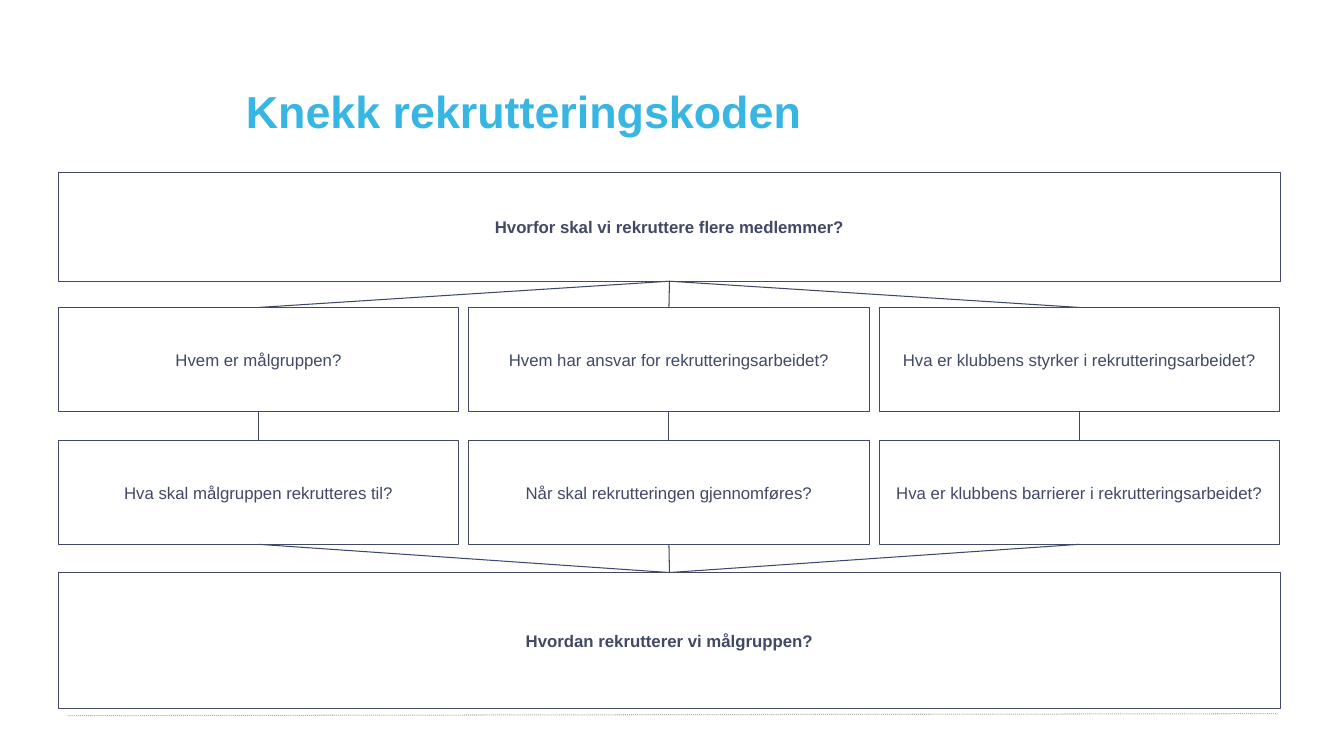
from dataclasses import dataclass

import pptx
import pptx.dml.color
import pptx.enum.dml
import pptx.enum.shapes
import pptx.enum.text
import pptx.oxml.ns
import pptx.shapes.autoshape
import pptx.shapes.connector
import pptx.slide
import pptx.text.text
import pptx.util
from lxml import etree

Inches = pptx.util.Inches
RGBColor = pptx.dml.color.RGBColor

CYAN = RGBColor(0x38, 0xB6, 0xE3)
NAVY = RGBColor(0x40, 0x49, 0x65)
LINK = RGBColor(0x3E, 0x47, 0x64)
GREY = RGBColor(0xA8, 0xA9, 0xAA)

LEFT, COL_STEP, COL_WIDTH, FULL_WIDTH = 0.58, 4.07, 3.97, 12.12
ROW_TOP, ROW_STEP, ROW_HEIGHT = 3.05, 1.32, 1.03
TOP, BOTTOM = 0, 2


@dataclass
class Box:
    text: str
    left: float
    top: float
    width: float
    height: float
    bold: bool = False


WHY = Box("Hvorfor skal vi rekruttere flere medlemmer?", LEFT, 1.71, FULL_WIDTH, 1.08, True)
HOW = Box("Hvordan rekrutterer vi målgruppen?", LEFT, 5.68, FULL_WIDTH, 1.35, True)
QUESTIONS = [
    ("Hvem er målgruppen?", "Hva skal målgruppen rekrutteres til?"),
    ("Hvem har ansvar for rekrutteringsarbeidet?", "Når skal rekrutteringen gjennomføres?"),
    (
        "Hva er klubbens styrker i rekrutteringsarbeidet?",
        "Hva er klubbens barrierer i rekrutteringsarbeidet?",
    ),
]


def write(
    tf: pptx.text.text.TextFrame,
    text: str,
    *,
    size: float = 12,
    bold: bool = False,
    color: RGBColor = NAVY,
    align: pptx.enum.text.PP_ALIGN = pptx.enum.text.PP_ALIGN.CENTER,
    anchor: pptx.enum.text.MSO_ANCHOR = pptx.enum.text.MSO_ANCHOR.MIDDLE,
) -> None:
    tf.word_wrap = True
    tf.vertical_anchor = anchor
    p = tf.paragraphs[0]
    p.alignment = align
    r = p.add_run()
    r.text = text
    r.font.name = "Arial"
    r.font.size = pptx.util.Pt(size)
    r.font.bold = bold
    r.font.color.rgb = color


def add_box(s: pptx.slide.Slide, box: Box) -> pptx.shapes.autoshape.Shape:
    sp = s.shapes.add_shape(
        pptx.enum.shapes.MSO_SHAPE.RECTANGLE,
        Inches(box.left), Inches(box.top), Inches(box.width), Inches(box.height),
    )
    sp.shadow.inherit = False
    sp.fill.background()
    sp.line.color.rgb = NAVY
    sp.line.width = pptx.util.Pt(0.75)
    write(sp.text_frame, box.text, bold=box.bold)
    return sp


def add_line(
    s: pptx.slide.Slide,
    color: RGBColor,
    x1: float = 0,
    y1: float = 0,
    x2: float = 0,
    y2: float = 0,
) -> pptx.shapes.connector.Connector:
    cxn = s.shapes.add_connector(
        pptx.enum.shapes.MSO_CONNECTOR.STRAIGHT,
        Inches(x1), Inches(y1), Inches(x2), Inches(y2),
    )
    cxn.line.color.rgb = color
    cxn.line.width = pptx.util.Pt(0.75)
    sp_pr = cxn.element.find(pptx.oxml.ns.qn("p:spPr"))
    etree.SubElement(sp_pr, pptx.oxml.ns.qn("a:effectLst"))
    return cxn


def join(
    s: pptx.slide.Slide,
    upper: pptx.shapes.autoshape.Shape,
    lower: pptx.shapes.autoshape.Shape,
) -> None:
    cxn = add_line(s, LINK)
    cxn.begin_connect(upper, BOTTOM)
    cxn.end_connect(lower, TOP)


def main() -> None:
    prs = pptx.Presentation()
    prs.slide_width, prs.slide_height = Inches(13.33), Inches(7.5)
    s = prs.slides.add_slide(prs.slide_layouts[6])

    footer = add_line(s, GREY, 0.67, 7.1, 12.67, 7.08)
    footer.line.dash_style = pptx.enum.dml.MSO_LINE.ROUND_DOT

    title = s.shapes.add_textbox(Inches(2.34), Inches(0.78), Inches(7.54), Inches(0.64))
    write(
        title.text_frame,
        "Knekk rekrutteringskoden",
        size=32,
        bold=True,
        color=CYAN,
        align=pptx.enum.text.PP_ALIGN.LEFT,
        anchor=pptx.enum.text.MSO_ANCHOR.TOP,
    )
    title.text_frame.auto_size = pptx.enum.text.MSO_AUTO_SIZE.SHAPE_TO_FIT_TEXT

    why, how = add_box(s, WHY), add_box(s, HOW)
    for col, questions in enumerate(QUESTIONS):
        left = LEFT + col * COL_STEP
        upper, lower = [
            add_box(s, Box(text, left, ROW_TOP + row * ROW_STEP, COL_WIDTH, ROW_HEIGHT))
            for row, text in enumerate(questions)
        ]
        join(s, why, upper)
        join(s, upper, lower)
        join(s, lower, how)

    prs.save("out.pptx")


if __name__ == "__main__":
    main()
